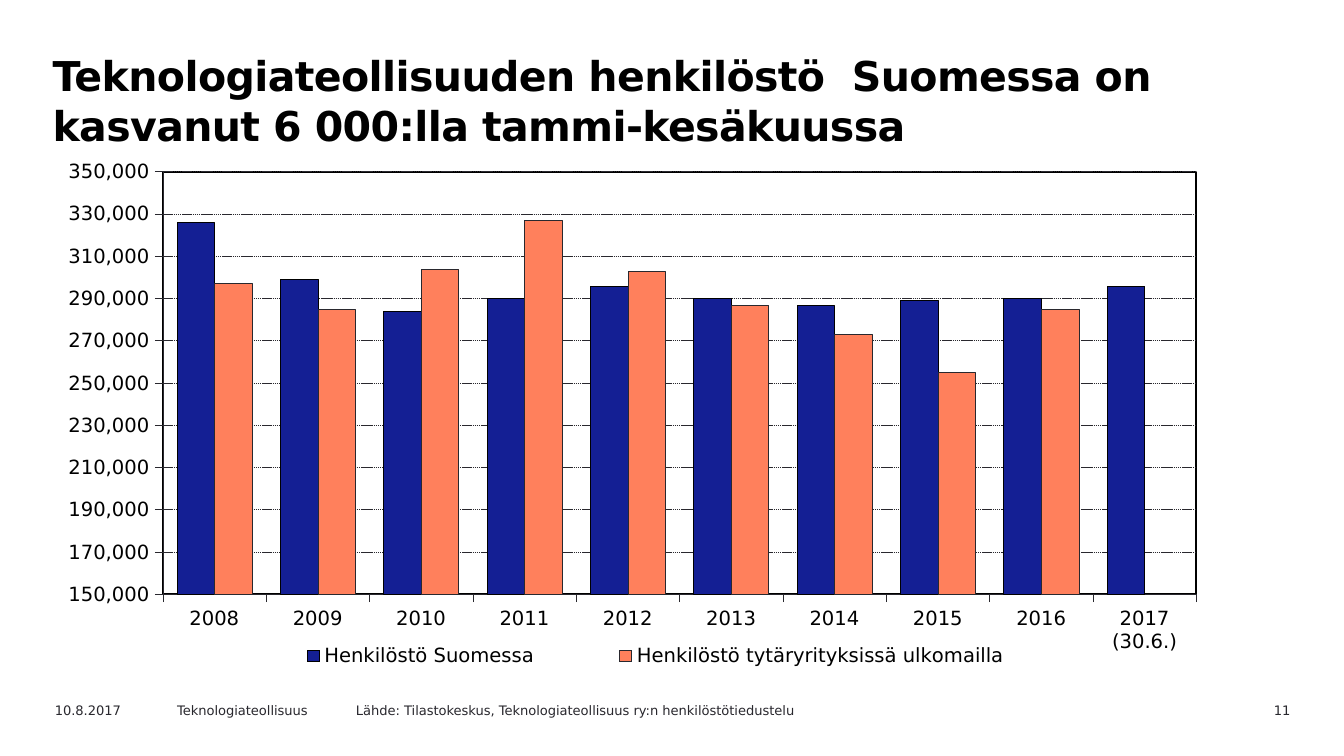
import pptx
import pptx.chart.data
import pptx.dml.color
import pptx.enum.chart
import pptx.enum.dml
import pptx.enum.text
import pptx.oxml
import pptx.oxml.ns
import pptx.util

Pt = pptx.util.Pt
FONT = "DejaVu Sans"
COLORS = {"black": "000000", "dark": "29282E", "blue": "141F94", "coral": "FF805C"}
YEARS = [str(year) for year in range(2008, 2017)] + ["2017 (30.6.)"]
SERIES = [
    ("Henkilöstö Suomessa ", "blue", "black",
     [326000, 299000, 284000, 290000, 296000, 290000, 287000, 289000, 290000, 296000]),
    ("Henkilöstö tytäryrityksissä ulkomailla ", "coral", "dark",
     [297000, 285000, 304000, 327000, 303000, 287000, 273000, 255000, 285000, None]),
]
FOOTERS = [
    (22.3, 72, "10.8.2017"),
    (87.8, 102.2, "Teknologiateollisuus"),
    (183.6, 278, "Lähde: Tilastokeskus, Teknologiateollisuus ry:n henkilöstötiedustelu"),
]


def rgb(name):
    return pptx.dml.color.RGBColor.from_string(COLORS[name])


def style_font(font, size, color, bold=False):
    font.name, font.size, font.bold = FONT, Pt(size), bold
    font.color.rgb = rgb(color)


def style_line(line, color, width=0.25):
    line.color.rgb = rgb(color)
    line.width = Pt(width)


def add_text(s, box, text, size, color, bold=False, align="LEFT", inset=7.2):
    tf = s.shapes.add_textbox(*map(Pt, box)).text_frame
    tf.word_wrap = True
    tf.margin_left = tf.margin_right = Pt(inset)
    tf.margin_top, tf.margin_bottom = Pt(4), 0
    p = tf.paragraphs[0]
    p.alignment = pptx.enum.text.PP_ALIGN[align]
    r = p.add_run()
    r.text = text
    style_font(r.font, size, color, bold)
    return p


def add_title(s):
    p = add_text(s, (20.2, 22.3, 629.3, 51.1),
                 "Teknologiateollisuuden henkilöstö  Suomessa on kasvanut 6 000:lla tammi-kesäkuussa",
                 22, "black", bold=True, inset=8)
    p.line_spacing = Pt(27)
    p.runs[0].font._element.set("spc", "-30")


def add_footers(s):
    for left, width, text in FOOTERS:
        add_text(s, (left, 372.2, width, 13), text, 7, "dark")
    add_text(s, (630.7, 372.2, 67.7, 13), "11", 7, "dark", align="RIGHT")


def set_layout(parent, x, y, w, h, inner=False):
    """Place a plot area or legend by fractions of the chart."""
    for old in parent.findall(pptx.oxml.ns.qn("c:layout")):
        parent.remove(old)
    target = '<c:layoutTarget val="inner"/>' if inner else ""
    layout = pptx.oxml.parse_xml(
        f'<c:layout {pptx.oxml.ns.nsdecls("c")}><c:manualLayout>{target}'
        '<c:xMode val="edge"/><c:yMode val="edge"/>'
        f'<c:x val="{x}"/><c:y val="{y}"/><c:w val="{w}"/><c:h val="{h}"/>'
        '</c:manualLayout></c:layout>')
    parent.insert(0 if inner else 1, layout)


def frame_plot(plot_area):
    plot_area.append(pptx.oxml.parse_xml(
        f'<c:spPr {pptx.oxml.ns.nsdecls("c", "a")}><a:noFill/><a:ln w="12700"><a:solidFill>'
        f'<a:srgbClr val="{COLORS["black"]}"/></a:solidFill></a:ln></c:spPr>'))


def style_axis(axis):
    axis.major_tick_mark = pptx.enum.chart.XL_TICK_MARK.OUTSIDE
    axis.minor_tick_mark = pptx.enum.chart.XL_TICK_MARK.NONE
    style_line(axis.format.line, "dark")
    style_font(axis.tick_labels.font, 10.5, "black")


def add_staff_chart(s):
    data = pptx.chart.data.CategoryChartData(number_format="#,##0")
    data.categories = YEARS
    for name, _, _, values in SERIES:
        data.add_series(name, values)
    chart = s.shapes.add_chart(
        pptx.enum.chart.XL_CHART_TYPE.COLUMN_CLUSTERED,
        Pt(31), Pt(74.2), Pt(631.4), Pt(287.3), data).chart
    chart.has_title = False
    style_font(chart.font, 10.5, "black")

    plot = chart.plots[0]
    plot.gap_width, plot.overlap = 75, 0
    plot.vary_by_categories = False
    for series, (_, fill, outline, _) in zip(plot.series, SERIES):
        series.format.fill.solid()
        series.format.fill.fore_color.rgb = rgb(fill)
        style_line(series.format.line, outline)

    style_axis(chart.category_axis)
    axis = chart.value_axis
    style_axis(axis)
    axis.minimum_scale, axis.maximum_scale, axis.major_unit = 150000, 350000, 20000
    axis.tick_labels.number_format = "#,##0"
    axis.tick_labels.number_format_is_linked = False
    grid = axis.major_gridlines.format.line
    style_line(grid, "dark")
    grid.dash_style = pptx.enum.dml.MSO_LINE.SQUARE_DOT

    chart.has_legend = True
    legend = chart.legend
    legend.position = pptx.enum.chart.XL_LEGEND_POSITION.RIGHT
    legend.include_in_layout = False
    style_font(legend.font, 10.5, "black")
    set_layout(legend._element, 0.15, 0.93, 0.72, 0.07)
    plot_area = chart._chartSpace.chart.plotArea
    set_layout(plot_area, 0.089, 0.062, 0.877, 0.788, inner=True)
    frame_plot(plot_area)


def main():
    prs = pptx.Presentation()
    prs.slide_width, prs.slide_height = Pt(720), Pt(405)
    s = prs.slides.add_slide(prs.slide_layouts[6])
    add_title(s)
    add_footers(s)
    add_staff_chart(s)
    prs.save("out.pptx")


if __name__ == "__main__":
    main()
